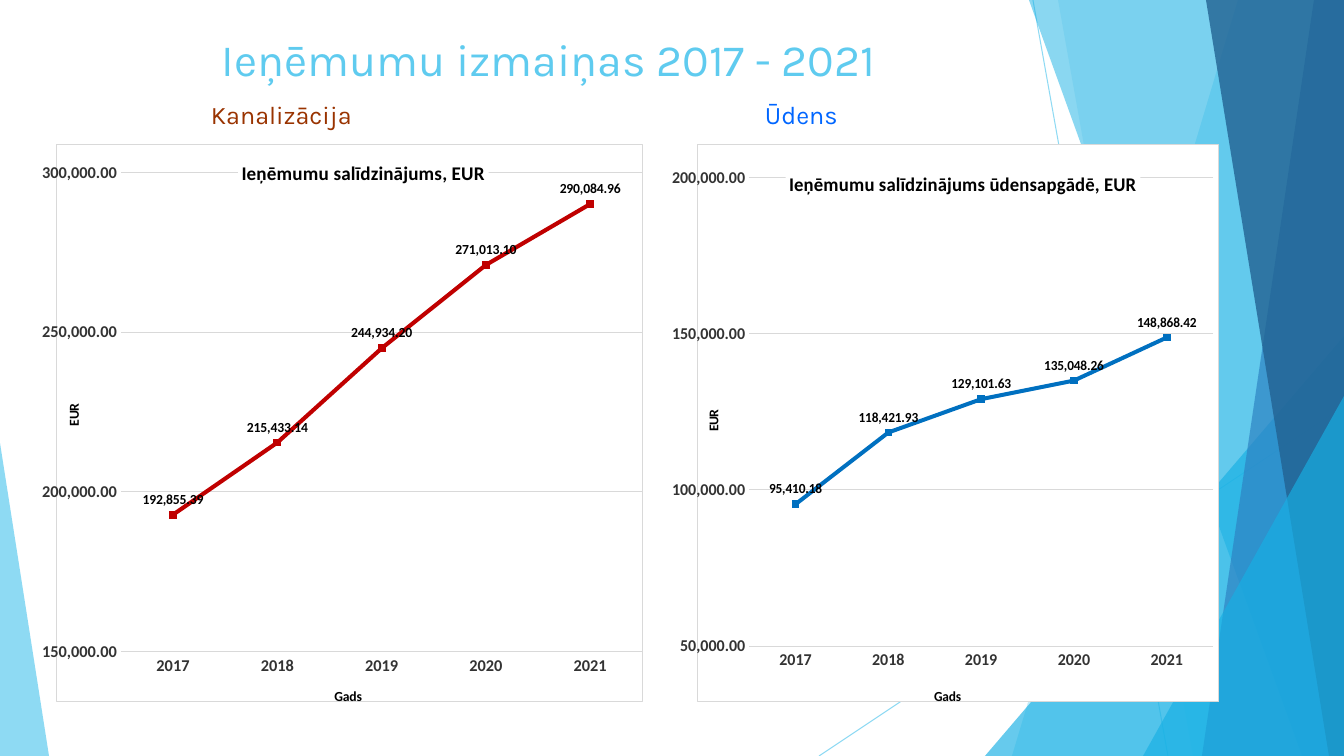
import dataclasses
import pptx
import pptx.chart.data
import pptx.dml.color
import pptx.enum.chart
import pptx.enum.shapes
import pptx.enum.text
import pptx.oxml
import pptx.oxml.ns
import pptx.util

WIDE, HIGH = 1344, 756
SCALE = 12192000 / WIDE
YEARS = ["2017", "2018", "2019", "2020", "2021"]
NS = pptx.oxml.ns.nsdecls("c", "a")
qn = pptx.oxml.ns.qn


@dataclasses.dataclass(frozen=True)
class Theme:
    sky: str = "5FCBEF"
    cyan: str = "17B0E4"
    blue: str = "2E83C3"
    navy: str = "226292"
    brown: str = "993300"
    azure: str = "0066FF"
    red: str = "C00000"
    water: str = "0070C0"
    grid: str = "D9D9D9"
    dark: str = "333333"
    black: str = "000000"
    white: str = "FFFFFF"
    head: str = "Karla"
    body: str = "Calibri"
    title: int = 32
    label: int = 18
    name: int = 14
    axis: int = 12
    small: int = 10


THEME = Theme()


def px(n):
    return pptx.util.Emu(round(n * SCALE))


def rgb(code):
    return pptx.dml.color.RGBColor.from_string(code)


def fade(node, pct):
    """Make the colours inside node pct percent opaque."""
    for clr in node.iter(qn("a:srgbClr")):
        clr.append(pptx.oxml.parse_xml(f'<a:alpha {NS} val="{pct * 1000}"/>'))


def style(font, size, color, bold=False, face=THEME.body):
    font.name, font.size, font.bold = face, pptx.util.Pt(size), bold
    font.color.rgb = rgb(color)


def paint(shape, color, pct):
    shape.shadow.inherit = False
    shape.fill.solid()
    shape.fill.fore_color.rgb = rgb(color)
    shape.line.fill.background()
    fade(shape._element.spPr, pct)


def add_ray(slide, start, end):
    ray = slide.shapes.add_connector(
        pptx.enum.shapes.MSO_CONNECTOR.STRAIGHT, *map(px, start + end))
    ray.line.color.rgb = rgb(THEME.sky)
    ray.line.width = pptx.util.Pt(0.75)
    props = ray._element.spPr
    fade(props, 70)
    props.append(pptx.oxml.parse_xml(f"<a:effectLst {NS}/>"))


def add_band(slide, top, foot, color, pct):
    """Fill from a slanted left edge to the right side of the slide."""
    pen = slide.shapes.build_freeform(top, 0, scale=SCALE)
    pen.add_line_segments([(WIDE, 0), (WIDE, HIGH), (foot, HIGH)], close=True)
    paint(pen.convert_to_shape(), color, pct)


def add_wedge(slide, box, tip, color, pct):
    kind = pptx.enum.shapes.MSO_SHAPE.ISOSCELES_TRIANGLE
    wedge = slide.shapes.add_shape(kind, *map(px, box))
    wedge.adjustments[0] = tip
    paint(wedge, color, pct)


def add_text(slide, box, text, size, color, align):
    frame = slide.shapes.add_textbox(*map(px, box)).text_frame
    frame.word_wrap = True
    frame.margin_left = frame.margin_right = 0
    frame.margin_top = frame.margin_bottom = 0
    para = frame.paragraphs[0]
    para.alignment = align
    run = para.add_run()
    run.text = text
    style(run.font, size, color, face=THEME.head)


def layout(place, inner=False):
    """Give a manual layout from x, y and, if present, width and height."""
    target = '<c:layoutTarget val="inner"/>' if inner else ""
    modes = '<c:xMode val="edge"/><c:yMode val="edge"/>'
    sides = "".join(f'<c:{k} val="{v}"/>' for k, v in zip("xywh", place))
    return pptx.oxml.parse_xml(
        f"<c:layout {NS}><c:manualLayout>{target}{modes}{sides}"
        "</c:manualLayout></c:layout>")


def drop(node, tag):
    for old in node.findall(qn(tag)):
        node.remove(old)


def set_title(title, text, size, place):
    run = title.text_frame.paragraphs[0].add_run()
    run.text = text
    style(run.font, size, THEME.black, True)
    node = title._element
    drop(node, "c:layout")
    node.find(qn("c:tx")).addnext(layout(place))
    node.find(qn("c:overlay")).set("val", "1")


def set_frame(chart):
    """Put a white fill and a thin border on the whole chart."""
    props = pptx.oxml.parse_xml(
        f'<c:spPr {NS}><a:solidFill><a:srgbClr val="{THEME.white}"/>'
        f'</a:solidFill><a:ln w="9525"><a:solidFill><a:srgbClr '
        f'val="{THEME.grid}"/></a:solidFill></a:ln></c:spPr>')
    chart._chartSpace.find(qn("c:txPr")).addprevious(props)


def set_axes(chart, low, high, places):
    enum = pptx.enum.chart
    across, up = chart.category_axis, chart.value_axis
    for axis, text, place in zip((across, up), ("Gads", "EUR"), places):
        axis.major_tick_mark = axis.minor_tick_mark = enum.XL_TICK_MARK.NONE
        style(axis.tick_labels.font, THEME.axis, THEME.dark, True)
        set_title(axis.axis_title, text, THEME.small, place)
    turn = up.axis_title.text_frame._txBody.bodyPr
    turn.set("rot", "-5400000")
    turn.set("vert", "horz")
    across.format.line.color.rgb = rgb(THEME.grid)
    across.format.line.width = pptx.util.Pt(0.75)
    up.format.line.fill.background()
    up.minimum_scale, up.maximum_scale, up.major_unit = low, high, 50000
    up.tick_labels.number_format = "#,##0.00"
    up.tick_labels.number_format_is_linked = False
    up.major_gridlines.format.line.color.rgb = rgb(THEME.grid)
    up.major_gridlines.format.line.width = pptx.util.Pt(0.75)


def set_line(plot, color):
    enum = pptx.enum.chart
    plot.vary_by_categories = False
    line = plot.series[0]
    line.smooth = False
    line.format.line.color.rgb = rgb(color)
    line.format.line.width = pptx.util.Pt(3)
    line.marker.style = enum.XL_MARKER_STYLE.SQUARE
    line.marker.size = 5
    line.marker.format.fill.solid()
    line.marker.format.fill.fore_color.rgb = rgb(color)
    line.marker.format.line.color.rgb = rgb(color)
    labels = line.data_labels
    labels.show_value = True
    labels.position = enum.XL_LABEL_POSITION.ABOVE
    labels.number_format = "#,##0.00"
    labels.number_format_is_linked = False
    style(labels.font, THEME.small, THEME.black, True)


def add_trend(slide, box, title, vals, color, span, area, places):
    """Add a line chart; places holds the spots of its three titles."""
    data = pptx.chart.data.CategoryChartData(number_format="#,##0.00")
    data.categories = YEARS
    data.add_series("EUR", vals)
    kind = pptx.enum.chart.XL_CHART_TYPE.LINE_MARKERS
    chart = slide.shapes.add_chart(kind, *map(px, box), data).chart
    chart.has_legend = False
    style(chart.font, THEME.small, THEME.black)
    set_frame(chart)
    set_title(chart.chart_title, title, THEME.name, places[0])
    fill = chart.chart_title.format.fill
    fill.solid()
    fill.fore_color.rgb = rgb(THEME.white)
    set_axes(chart, *span, places[1:])
    set_line(chart.plots[0], color)
    region = chart._chartSpace.chart.plotArea
    drop(region, "c:layout")
    region.insert(0, layout(area, True))


def main():
    deck = pptx.Presentation()
    deck.slide_width, deck.slide_height = px(WIDE), px(HIGH)
    slide = deck.slides.add_slide(deck.slide_layouts[6])
    add_ray(slide, (1033, 0), (1168, HIGH))
    add_ray(slide, (WIDE, 406), (819, HIGH))
    add_band(slide, 1238, 1012, THEME.sky, 36)
    add_band(slide, 1058, 1193, THEME.sky, 20)
    add_wedge(slide, (985, 336, 359, 420), 1, THEME.cyan, 66)
    add_band(slide, 1029, 1302, THEME.cyan, 50)
    add_band(slide, 1314, 1202, THEME.blue, 70)
    add_band(slide, 1206, 1329, THEME.navy, 80)
    add_wedge(slide, (1143, 396, 201, 360), 1, THEME.cyan, 66)
    add_wedge(slide, (0, 443, 49, 313), 0, THEME.sky, 70)
    align = pptx.enum.text.PP_ALIGN
    add_text(slide, (75, 32, 948, 56), "Ieņēmumu izmaiņas 2017 - 2021",
             THEME.title, THEME.sky, align.CENTER)
    add_text(slide, (211, 99, 200, 32), "Kanalizācija",
             THEME.label, THEME.brown, align.LEFT)
    add_text(slide, (765, 99, 200, 32), "Ūdens",
             THEME.label, THEME.azure, align.LEFT)
    add_trend(slide, (42, 144, 601, 565), "Ieņēmumu salīdzinājums, EUR",
              (192855.39, 215433.14, 244934.20, 271013.10, 290084.96),
              THEME.red, (150000, 300000), (0.11, 0.05, 0.89, 0.86),
              ((0.31, 0.02), (0.47, 0.97), (0.01, 0.46)))
    add_trend(slide, (672, 144, 547, 565),
              "Ieņēmumu salīdzinājums ūdensapgādē, EUR",
              (95410.18, 118421.93, 129101.63, 135048.26, 148868.42),
              THEME.water, (50000, 200000), (0.1, 0.06, 0.89, 0.84),
              ((0.17, 0.04), (0.45, 0.97), (0.01, 0.47)))
    deck.save("out.pptx")


if __name__ == "__main__":
    main()
